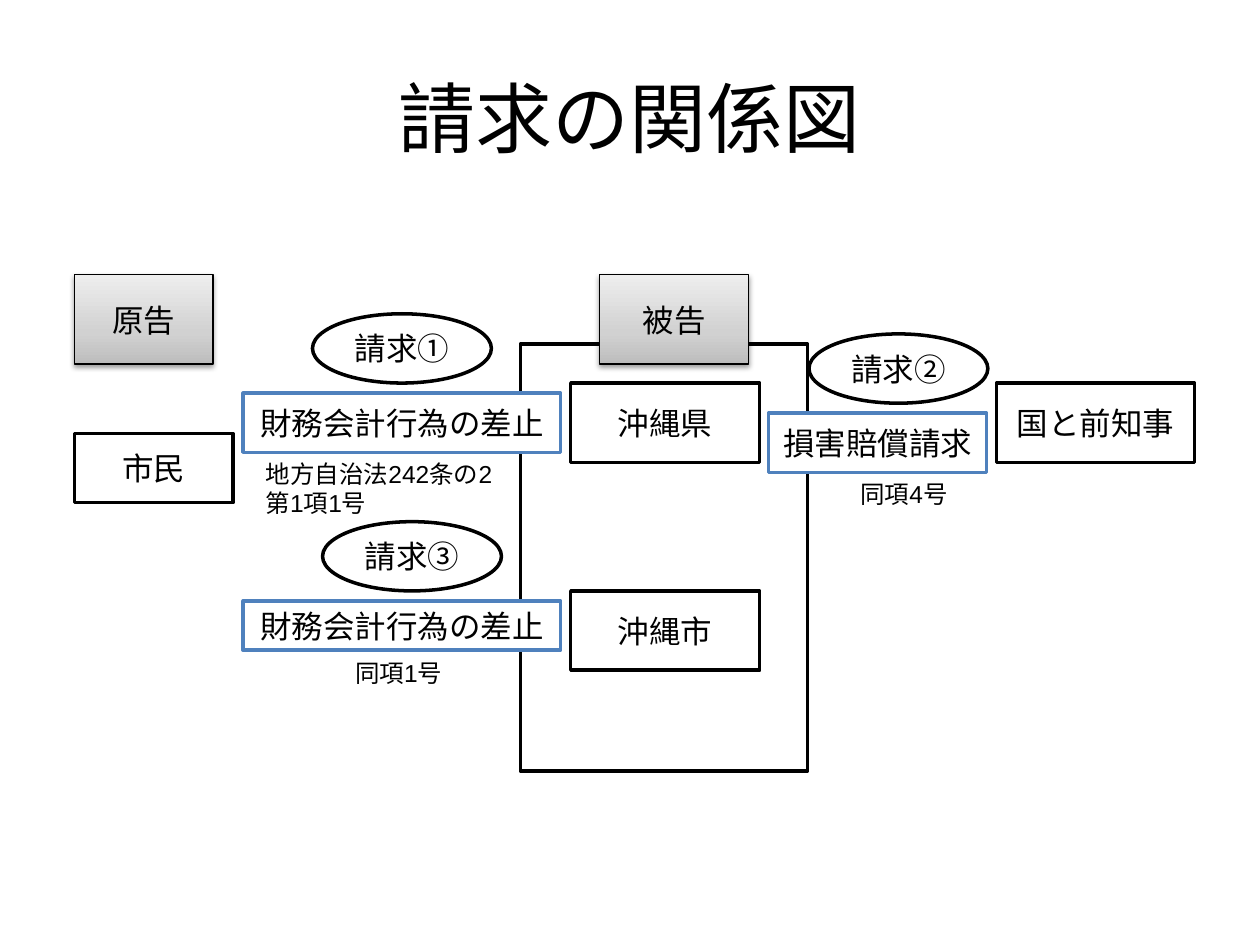
from copy import deepcopy

from lxml.etree import SubElement
from pptx import Presentation
from pptx.dml.color import RGBColor
from pptx.enum.shapes import MSO_SHAPE as Shape
from pptx.enum.text import MSO_ANCHOR as Anchor, MSO_AUTO_SIZE as AutoSize, PP_ALIGN as Align
from pptx.oxml.ns import qn
from pptx.util import Inches, Pt

COLORS = {"ink": "000000", "paper": "FFFFFF", "claim": "4F81BD",
          "dark": "BDBDBD", "mid": "D1D1D1", "light": "EEEEEE"}


def write(holder, text, size=18, font="Calibri", align=Align.CENTER, anchor=Anchor.MIDDLE):
    frame = holder.text_frame
    frame.word_wrap = True
    frame.vertical_anchor = anchor
    paragraph = frame.paragraphs[0]
    paragraph.alignment = align
    run = paragraph.add_run()
    run.text = text
    run.font.size = Pt(size)
    run.font.name = font
    run.font.color.rgb = RGBColor.from_string(COLORS["ink"])


def add_box(left, top, width, height, text="", kind=Shape.RECTANGLE, line="ink", weight=2):
    box = slide.shapes.add_shape(kind, Inches(left), Inches(top), Inches(width), Inches(height))
    box.shadow.inherit = False
    box.fill.solid()
    box.fill.fore_color.rgb = RGBColor.from_string(COLORS["paper"])
    box.line.color.rgb = RGBColor.from_string(COLORS[line])
    box.line.width = Pt(weight)
    if text:
        write(box, text)
    return box


prs = Presentation()
prs.slide_width, prs.slide_height = Inches(10), Inches(7.5)
slide = prs.slides.add_slide(prs.slide_layouts[5])

title = slide.shapes.title
title.left, title.top, title.width, title.height = map(Inches, (0.5, 0.3, 9, 1.25))
write(title, "請求の関係図", size=44)

# Frame around the defendants
add_box(4.13, 2.73, 2.28, 3.39)

# Role headings: grey gradient with a soft shadow
for left, width, role in [(0.59, 1.1, "原告"), (4.76, 1.18, "被告")]:
    heading = add_box(left, 2.18, width, 0.71, role, weight=0.75)
    heading.fill.gradient()
    heading.fill.gradient_angle = 90
    properties = heading._element.spPr
    first_stop = properties.find(".//" + qn("a:gs"))
    first_stop.addnext(deepcopy(first_stop))
    for stop, position, color in zip(heading.fill.gradient_stops, (0, 0.35, 1),
                                     ("dark", "mid", "light")):
        stop.position = position
        stop.color.rgb = RGBColor.from_string(COLORS[color])
    shadow = SubElement(properties.find(qn("a:effectLst")), qn("a:outerShdw"),
                        blurRad=str(Pt(3.1)), dist=str(Pt(1.6)), dir="5400000", rotWithShape="0")
    shadow_color = SubElement(shadow, qn("a:srgbClr"), val=COLORS["ink"])
    SubElement(shadow_color, qn("a:alpha"), val="38000")

# Parties
for left, top, width, height, party in [
    (0.59, 3.44, 1.26, 0.55, "市民"),
    (4.53, 3.04, 1.5, 0.63, "沖縄県"),
    (4.53, 4.69, 1.5, 0.63, "沖縄市"),
    (7.91, 3.04, 1.57, 0.63, "国と前知事"),
]:
    add_box(left, top, width, height, party)

# Claims
for left, top, width, height, claim in [
    (1.93, 3.12, 2.52, 0.47, "財務会計行為の差止"),
    (6.1, 3.28, 1.73, 0.47, "損害賠償請求"),
    (1.93, 4.77, 2.52, 0.39, "財務会計行為の差止"),
]:
    add_box(left, top, width, height, claim, line="claim")

# Claim numbers
for left, top, number in [(2.48, 2.49, "①"), (6.42, 2.65, "②"), (2.56, 4.14, "③")]:
    add_box(left, top, 1.42, 0.55, "請求" + number, kind=Shape.OVAL)

# Legal basis under each claim
for left, top, width, height, basis in [
    (2.01, 3.59, 2.13, 0.57, "地方自治法242条の2第1項1号"),
    (6.73, 3.75, 1.26, 0.34, "同項4号"),
    (2.72, 5.17, 1.1, 0.34, "同項1号"),
]:
    note = slide.shapes.add_textbox(Inches(left), Inches(top), Inches(width), Inches(height))
    write(note, basis, size=14, font="Arial", align=Align.LEFT, anchor=Anchor.TOP)
    note.text_frame.auto_size = AutoSize.SHAPE_TO_FIT_TEXT

prs.save("out.pptx")
